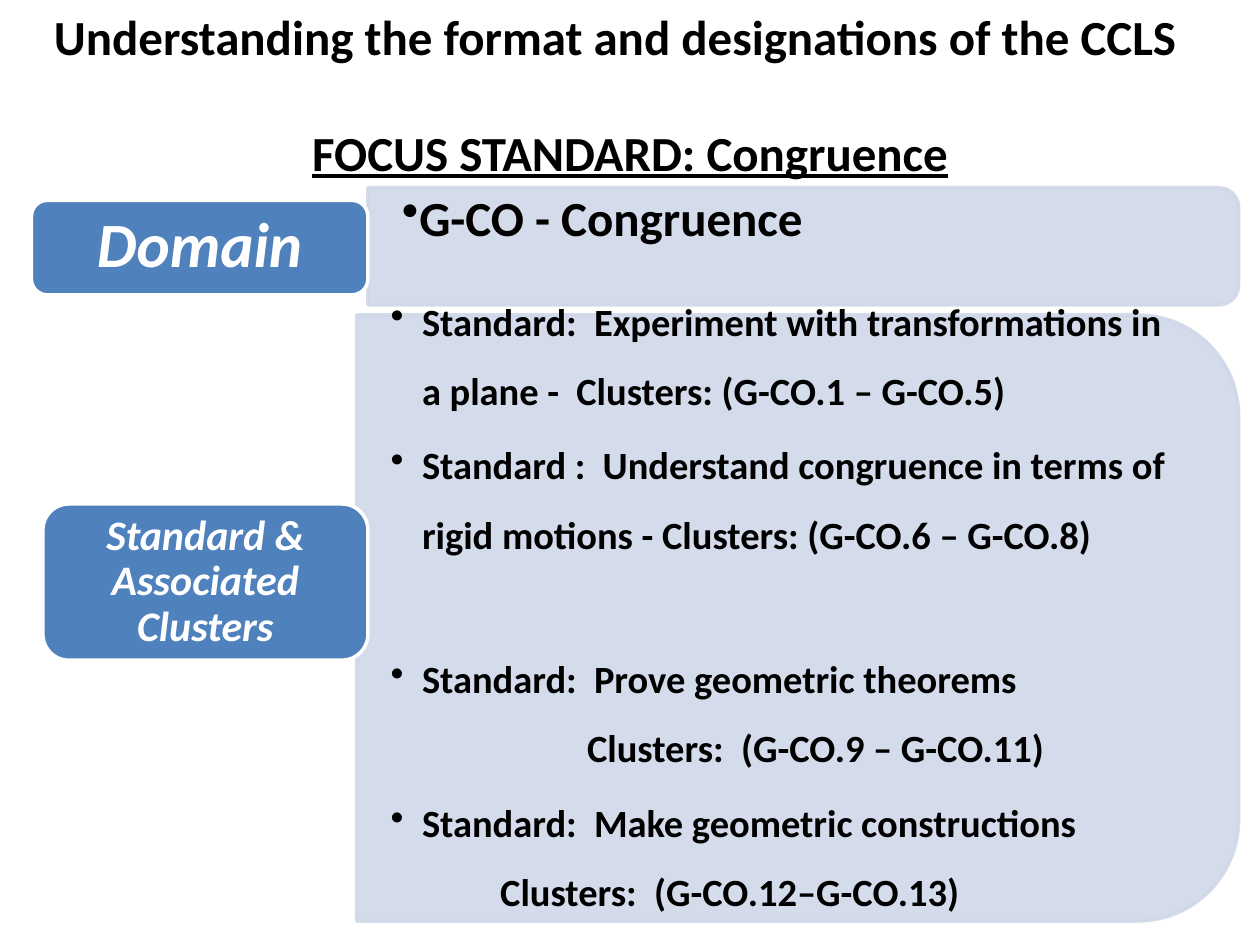
import pptx
import pptx.util
import pptx.dml.color
import pptx.enum.shapes
import pptx.enum.text
import pptx.oxml.ns
from lxml import etree

Inches = pptx.util.Inches
Pt = pptx.util.Pt
SHAPE = pptx.enum.shapes.MSO_SHAPE
ALIGN = pptx.enum.text.PP_ALIGN
ANCHOR = pptx.enum.text.MSO_ANCHOR
qn = pptx.oxml.ns.qn

THEME = {
    "font": "Calibri", "ink": "000000", "light": "FFFFFF",
    "label": "4F81BD", "panel": "D0D8E8", "panel_alpha": 90,
    "heading": 28, "standard": 22, "domain_label": 36, "cluster_label": 24,
}

heading = "Understanding the format and designations of the CCLS"
focus = "FOCUS STANDARD: Congruence"
domain = "G-CO - Congruence"
standards = [
    {"text": "Standard:  Experiment with transformations in a plane -  Clusters: (G-CO.1 – G-CO.5)"},
    {"text": "Standard :  Understand congruence in terms of rigid motions - Clusters: (G-CO.6 – G-CO.8)", "before": 3},
    {"text": "Standard:  Prove geometric theorems", "before": 43},
    {"text": "Clusters:  (G-CO.9 – G-CO.11)", "indent": 1.56},
    {"text": "Standard:  Make geometric constructions", "before": 3},
    {"text": "Clusters:  (G-CO.12–G-CO.13)", "indent": 0.87},
]
panels = [(2.92, 1.49, 6.91, 0.93), (2.83, 2.5, 7, 4.81)]
labels = [
    ("Domain", (0.25, 1.59, 2.67, 0.75), THEME["domain_label"]),
    ("Standard & Associated Clusters", (0.34, 4, 2.58, 1.24), THEME["cluster_label"]),
]

deck = pptx.Presentation()
deck.slide_width, deck.slide_height = Inches(10), Inches(7.5)
slide = deck.slides.add_slide(deck.slide_layouts[6])


def rgb(name):
    return pptx.dml.color.RGBColor.from_string(THEME[name])


def write(paragraph, text, size, color="ink", italic=False, underline=False,
          align=ALIGN.LEFT, spacing=1.0, before=0, bullet=False, indent=0, hanging=0):
    paragraph.alignment = align
    paragraph.line_spacing = spacing
    paragraph.space_before = Pt(before)
    properties = paragraph._p.get_or_add_pPr()
    properties.set("marL", str(Inches(indent)))
    properties.set("indent", str(Inches(-hanging)))
    if bullet:
        etree.SubElement(properties, qn("a:buChar")).set("char", "•")
    run = paragraph.add_run()
    run.text = text
    run.font.name = THEME["font"]
    run.font.size = Pt(size)
    run.font.bold = True
    run.font.italic = italic
    run.font.underline = underline
    run.font.color.rgb = rgb(color)


def text_area(box, side=0.1, edge=0.05):
    frame = slide.shapes.add_textbox(*map(Inches, box)).text_frame
    frame.word_wrap = True
    frame.vertical_anchor = ANCHOR.TOP
    frame.margin_left = frame.margin_right = Inches(side)
    frame.margin_top = frame.margin_bottom = Inches(edge)
    return frame


def block(kind, box, fill, line):
    shape = slide.shapes.add_shape(kind, *map(Inches, box))
    shape.shadow.inherit = False
    shape.fill.solid()
    shape.fill.fore_color.rgb = rgb(fill)
    shape.line.color.rgb = rgb(line)
    shape.line.width = Pt(2)
    return shape


write(text_area((0, 0.92, 10, 6.58)).paragraphs[0], focus, THEME["heading"],
      underline=True, align=ALIGN.CENTER)

for left, top, width, height in panels:
    upright = (left + (width - height) / 2, top + (height - width) / 2, height, width)
    panel = block(SHAPE.ROUND_2_SAME_RECTANGLE, upright, "panel", "panel")
    panel.rotation = 90
    for color in panel._element.spPr.iter(qn("a:srgbClr")):
        etree.SubElement(color, qn("a:alpha")).set("val", str(THEME["panel_alpha"] * 1000))

write(text_area((2.92, 1.49, 6.86, 0.9), 0.27, 0).paragraphs[0], domain,
      THEME["heading"], bullet=True)

standards_frame = text_area((2.83, 2.18, 6.76, 5.1), 0.27, 0)
for number, standard in enumerate(standards):
    paragraph = standards_frame.add_paragraph() if number else standards_frame.paragraphs[0]
    is_cluster = "indent" in standard
    write(paragraph, standard["text"], THEME["standard"], spacing=1.5,
          before=standard.get("before", 0), bullet=not is_cluster,
          indent=standard.get("indent", 0.25), hanging=0 if is_cluster else 0.25)

for caption, box, size in labels:
    label = block(SHAPE.ROUNDED_RECTANGLE, box, "label", "light")
    label.text_frame.word_wrap = True
    label.text_frame.vertical_anchor = ANCHOR.MIDDLE
    write(label.text_frame.paragraphs[0], caption, size, color="light", italic=True,
          align=ALIGN.CENTER, spacing=0.9)

write(text_area((0.33, 0, 9.25, 0.57)).paragraphs[0], heading, THEME["heading"])

deck.save("out.pptx")
